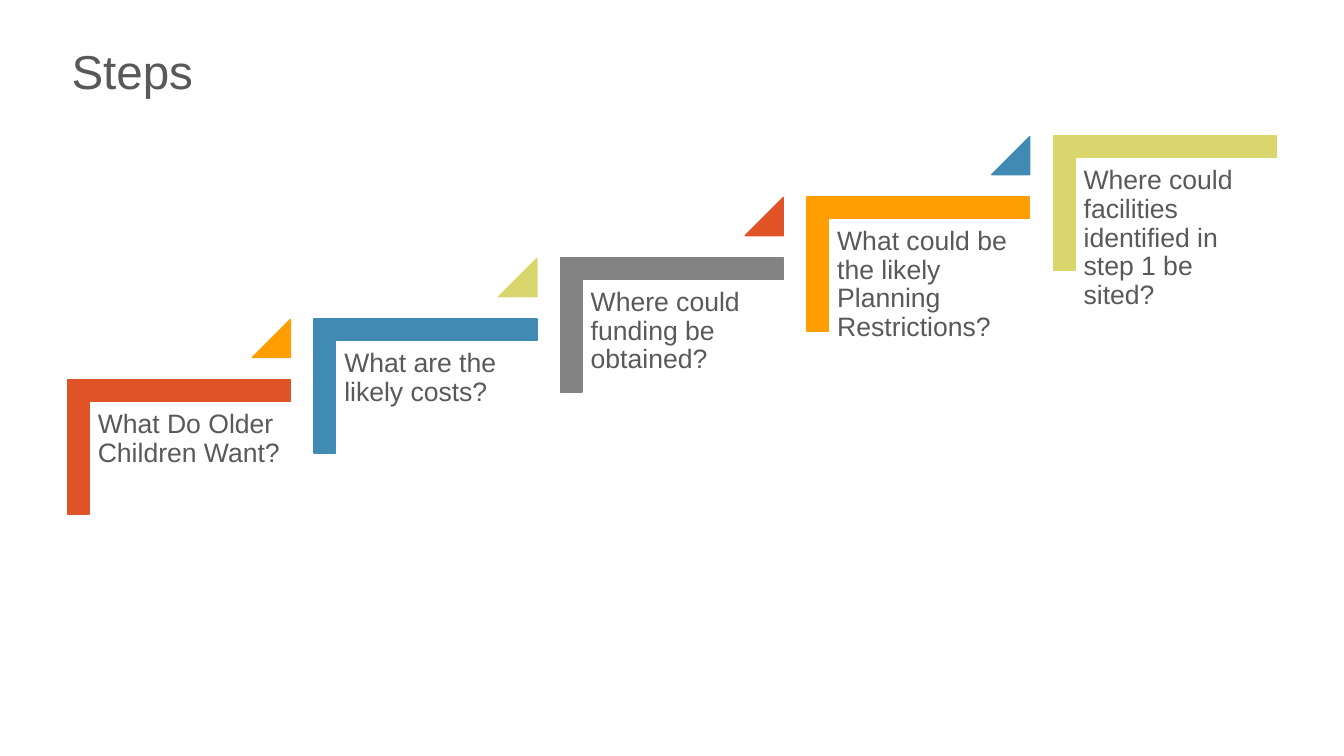
from dataclasses import dataclass

from pptx import Presentation
from pptx.dml.color import RGBColor
from pptx.enum import shapes, text
from pptx.util import Pt


@dataclass(frozen=True)
class Theme:
    font: str = "Arial"
    ink: str = "595959"
    title_size: float = 34
    step_size: float = 19
    red: str = "DF5327"
    blue: str = "418AB3"
    gray: str = "838383"
    orange: str = "FE9E00"
    lime: str = "D9D66D"


THEME = Theme()

STEPS = [
    ("What Do Older Children Want?", THEME.red, THEME.orange),
    ("What are the likely costs?", THEME.blue, THEME.lime),
    ("Where could funding be obtained?", THEME.gray, THEME.red),
    ("What could be the likely Planning Restrictions?", THEME.orange, THEME.blue),
    ("Where could facilities identified in step 1 be sited?", THEME.lime, None),
]


def add_text(page, left, top, width, height, words, size, anchor, inset=None):
    box = page.shapes.add_textbox(Pt(left), Pt(top), Pt(width), Pt(height))
    frame = box.text_frame
    frame.word_wrap = True
    frame.vertical_anchor = anchor
    if inset is not None:
        frame.margin_left = frame.margin_right = Pt(inset)
        frame.margin_top = frame.margin_bottom = Pt(inset)
    para = frame.paragraphs[0]
    para.line_spacing = 0.9
    span = para.add_run()
    span.text = words
    span.font.name = THEME.font
    span.font.size = Pt(size)
    span.font.color.rgb = RGBColor.from_string(THEME.ink)


def add_solid(page, kind, left, top, width, height, color, adjustments):
    solid = page.shapes.add_shape(kind, Pt(left), Pt(top), Pt(width), Pt(height))
    solid.shadow.inherit = False
    solid.fill.solid()
    solid.fill.fore_color.rgb = RGBColor.from_string(color)
    solid.line.color.rgb = RGBColor.from_string(color)
    solid.line.width = Pt(1)
    for index, value in enumerate(adjustments):
        solid.adjustments[index] = value
    return solid


def add_title(page, left, top, width, height):
    add_text(page, left, top, width, height, "Steps", THEME.title_size,
             text.MSO_ANCHOR.BOTTOM)


def add_step(page, left, top, width, height, words, color, marker_color):
    shift = (width - height) / 2
    corner = add_solid(page, shapes.MSO_SHAPE.CORNER, left + shift, top - shift,
                       height, width, color, (0.161, 0.161))
    corner.rotation = 90
    add_text(page, left + 15.8, top + 15.9, 144, 126, words, THEME.step_size,
             text.MSO_ANCHOR.TOP, 5.9)
    if marker_color:
        side = 27.2
        add_solid(page, shapes.MSO_SHAPE.ISOSCELES_TRIANGLE, left + width - side,
                  top - 43.2, side, side, marker_color, (1,))


def add_staircase(page, left, top, width, height):
    step_width, step_height = 159.2, 95.8
    across = (width - step_width) / (len(STEPS) - 1)
    rise = (height - step_height) / (len(STEPS) - 1)
    first_top = top + height - step_height
    for index, step in enumerate(STEPS):
        add_step(page, left + index * across, first_top - index * rise,
                 step_width, step_height, *step)


def main():
    deck = Presentation()
    deck.slide_width, deck.slide_height = Pt(960), Pt(540)
    page = deck.slides.add_slide(deck.slide_layouts[6])
    add_title(page, 44, 23.8, 868, 51)
    add_staircase(page, 48.2, 97.2, 863.4, 270)
    deck.save("out.pptx")


if __name__ == "__main__":
    main()
